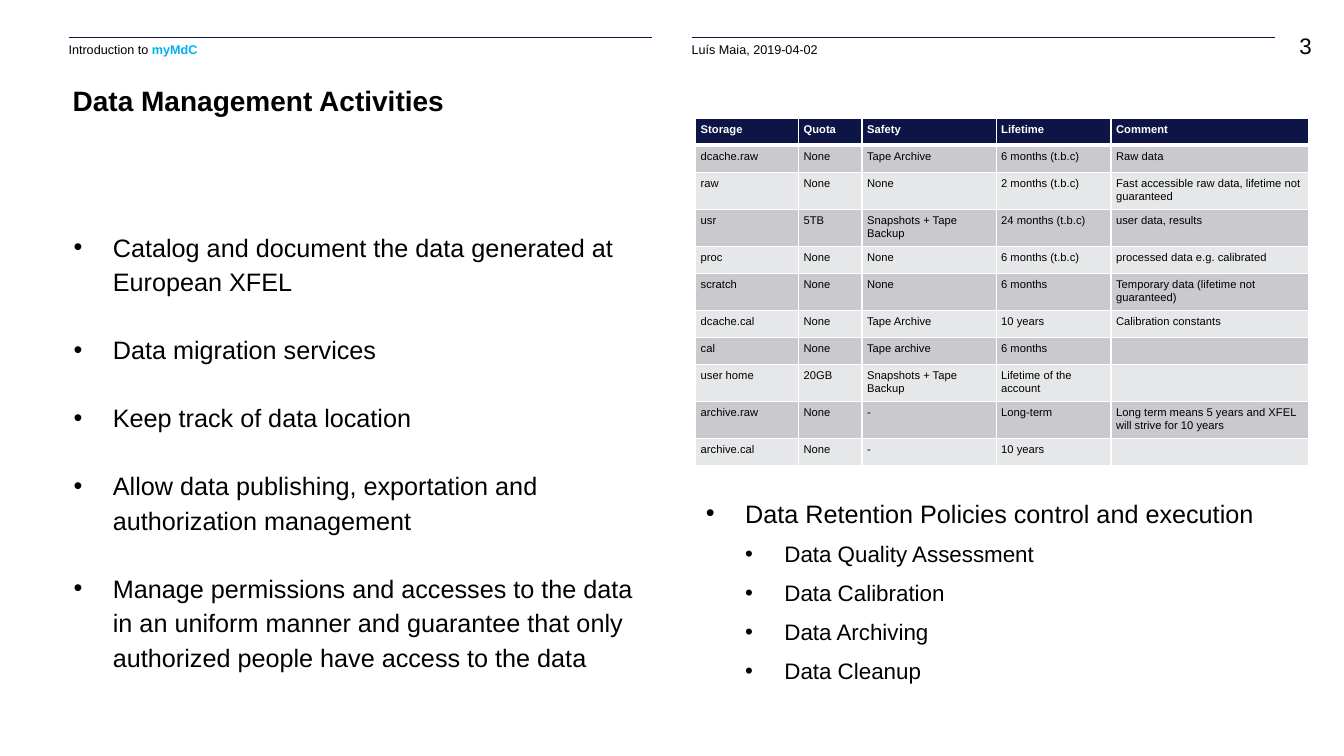
import dataclasses
import typing

import lxml.etree
import pptx
import pptx.dml.color
import pptx.enum.shapes
import pptx.enum.text
import pptx.oxml.ns
import pptx.util

Inches = pptx.util.Inches
Pt = pptx.util.Pt
qn = pptx.oxml.ns.qn


@dataclasses.dataclass(frozen=True)
class Theme:
    font: str = "Arial"
    text: str = "000000"
    accent: str = "00B0F0"
    navy: str = "0D1546"
    white: str = "FFFFFF"
    bands: tuple[str, str] = ("CACACE", "E6E7E8")
    table_size: float = 8
    header_size: float = 9
    sub_bullet_size: float = 16
    number_size: float = 16
    bullet_size: float = 18
    title_size: float = 20


THEME = Theme()


class Box(typing.NamedTuple):
    left: float
    top: float
    width: float
    height: float


class Run(typing.NamedTuple):
    text: str
    size: float
    color: str = THEME.text
    bold: bool = False


class Bullet(typing.NamedTuple):
    text: str
    level: int = 0


@dataclasses.dataclass(frozen=True)
class Label:
    box: Box
    runs: tuple[Run, ...]
    inset: float = 0
    wrap: bool = True
    alignment: pptx.enum.text.PP_ALIGN = pptx.enum.text.PP_ALIGN.LEFT


@dataclasses.dataclass(frozen=True)
class BulletList:
    box: Box
    bullets: tuple[Bullet, ...]


INSET = 0.05
HANGING_INDENT = 0.39
HEADER_WIDTH = 5.79
HEADER_LEFTS = (0.68, 6.86)
RULE_TOP = 0.37

HEADERS = (
    (Run("Introduction to ", THEME.header_size),
     Run("myMdC", THEME.header_size, THEME.accent, True)),
    (Run("Luís Maia, 2019-04-02", THEME.header_size),),
)
LABELS = [Label(Box(left, 0.42, HEADER_WIDTH, 0.14), runs)
          for left, runs in zip(HEADER_LEFTS, HEADERS)] + [
    Label(Box(12.87, 0.32, 0.14, 0.24), (Run("3", THEME.number_size),),
          wrap=False, alignment=pptx.enum.text.PP_ALIGN.RIGHT),
    Label(Box(0.67, 0.78, 11.98, 0.41),
          (Run("Data Management Activities", THEME.title_size, bold=True),), INSET),
]

BULLET_LISTS = (
    BulletList(Box(0.68, 2.21, 5.83, 4.37), (
        Bullet("Catalog and document the data generated at European XFEL"),
        Bullet("Data migration services"),
        Bullet("Keep track of data location"),
        Bullet("Allow data publishing, exportation and authorization management"),
        Bullet("Manage permissions and accesses to the data in an uniform manner "
               "and guarantee that only authorized people have access to the data"),
    )),
    BulletList(Box(6.95, 4.85, 6.02, 1.86), (
        Bullet("Data Retention Policies control and execution"),
        Bullet("Data Quality Assessment", 1),
        Bullet("Data Calibration", 1),
        Bullet("Data Archiving", 1),
        Bullet("Data Cleanup", 1),
    )),
)

STORAGE_BOX = Box(6.9, 1.17, 6.07, 3.2)
COLUMN_WIDTHS = (1.02, 0.63, 1.33, 1.14, 1.96)
ROW_HEIGHT = 0.27
TALL_ROW_HEIGHT = 0.36
TALL_ROWS = ("raw", "user home")
STORAGE_ROWS = (
    ("Storage", "Quota", "Safety", "Lifetime", "Comment"),
    ("dcache.raw", "None", "Tape Archive", "6 months (t.b.c)", "Raw data"),
    ("raw", "None", "None", "2 months (t.b.c)",
     "Fast accessible raw data, lifetime not guaranteed"),
    ("usr", "5TB", "Snapshots + Tape Backup", "24 months (t.b.c)", "user data, results"),
    ("proc", "None", "None", "6 months (t.b.c)", "processed data e.g. calibrated"),
    ("scratch", "None", "None", "6 months", "Temporary data (lifetime not guaranteed)"),
    ("dcache.cal", "None", "Tape Archive", "10 years", "Calibration constants"),
    ("cal", "None", "Tape archive", "6 months", ""),
    ("user home", "20GB", "Snapshots + Tape Backup", "Lifetime of the account", ""),
    ("archive.raw", "None", "-", "Long-term",
     "Long term means 5 years and XFEL will strive for 10 years"),
    ("archive.cal", "None", "-", "10 years", ""),
)


def rgb(color: str) -> pptx.dml.color.RGBColor:
    return pptx.dml.color.RGBColor.from_string(color)


def add_run(paragraph, run: Run) -> None:
    text_run = paragraph.add_run()
    text_run.text = run.text
    font = text_run.font
    font.name, font.size, font.bold = THEME.font, Pt(run.size), run.bold
    font.color.rgb = rgb(run.color)


def set_margins(target, inset: float) -> None:
    for side in ("left", "top", "right", "bottom"):
        setattr(target, f"margin_{side}", Inches(inset))


def add_text_frame(slide, box: Box, inset: float, wrap: bool = True):
    frame = slide.shapes.add_textbox(*map(Inches, box)).text_frame
    frame.word_wrap = wrap
    frame.auto_size = pptx.enum.text.MSO_AUTO_SIZE.SHAPE_TO_FIT_TEXT
    set_margins(frame, inset)
    return frame


def add_label(slide, label: Label) -> None:
    paragraph = add_text_frame(slide, label.box, label.inset, label.wrap).paragraphs[0]
    paragraph.alignment = label.alignment
    for run in label.runs:
        add_run(paragraph, run)


def add_bullet_list(slide, bullet_list: BulletList) -> None:
    frame = add_text_frame(slide, bullet_list.box, INSET)
    for index, bullet in enumerate(bullet_list.bullets):
        paragraph = frame.add_paragraph() if index else frame.paragraphs[0]
        paragraph.level = bullet.level
        paragraph.line_spacing = 1.14
        if index:
            paragraph.space_before = Pt(6 if bullet.level else 24)
        properties = paragraph._p.get_or_add_pPr()
        properties.set("marL", str(Inches(HANGING_INDENT * (bullet.level + 1))))
        properties.set("indent", str(-Inches(HANGING_INDENT)))
        lxml.etree.SubElement(properties, qn("a:buFont"), typeface=THEME.font)
        lxml.etree.SubElement(properties, qn("a:buChar"), char="•")
        size = THEME.sub_bullet_size if bullet.level else THEME.bullet_size
        add_run(paragraph, Run(bullet.text, size))


def add_header_rule(slide, left: float) -> None:
    rule = slide.shapes.add_connector(
        pptx.enum.shapes.MSO_CONNECTOR.STRAIGHT, Inches(left), Inches(RULE_TOP),
        Inches(left + HEADER_WIDTH), Inches(RULE_TOP))
    rule.line.color.rgb = rgb(THEME.navy)
    rule.line.width = Pt(0.5)
    lxml.etree.SubElement(rule._element.spPr, qn("a:effectLst"))


def fill_cell(cell, run: Run, fill: str, bottom_border: float) -> None:
    set_margins(cell, INSET)
    properties = cell._tc.get_or_add_tcPr()
    for side, width in (("L", 1), ("R", 1), ("T", 1), ("B", bottom_border)):
        border = lxml.etree.SubElement(properties, qn(f"a:ln{side}"), w=str(Pt(width)))
        solid = lxml.etree.SubElement(border, qn("a:solidFill"))
        lxml.etree.SubElement(solid, qn("a:srgbClr"), val=THEME.white)
    cell.fill.solid()
    cell.fill.fore_color.rgb = rgb(fill)
    paragraph = cell.text_frame.paragraphs[0]
    if run.text:
        add_run(paragraph, run)
    else:
        lxml.etree.SubElement(paragraph._p, qn("a:endParaRPr"), sz=str(int(run.size * 100)))


def add_storage_table(slide) -> None:
    table = slide.shapes.add_table(
        len(STORAGE_ROWS), len(COLUMN_WIDTHS), *map(Inches, STORAGE_BOX)).table
    table.horz_banding = False
    for column, width in zip(table.columns, COLUMN_WIDTHS):
        column.width = Inches(width)
    for index, values in enumerate(STORAGE_ROWS):
        tall = values[0] in TALL_ROWS
        table.rows[index].height = Inches(TALL_ROW_HEIGHT if tall else ROW_HEIGHT)
        heading = index == 0
        fill = THEME.navy if heading else THEME.bands[(index - 1) % 2]
        color = THEME.white if heading else THEME.text
        for cell, text in zip(table.rows[index].cells, values):
            run = Run(text, THEME.table_size, color, heading)
            fill_cell(cell, run, fill, 3 if heading else 1)


def main() -> None:
    presentation = pptx.Presentation()
    presentation.slide_width, presentation.slide_height = Inches(13.33), Inches(7.5)
    slide = presentation.slides.add_slide(presentation.slide_layouts[6])
    for left in HEADER_LEFTS:
        add_header_rule(slide, left)
    for label in LABELS:
        add_label(slide, label)
    for bullet_list in BULLET_LISTS:
        add_bullet_list(slide, bullet_list)
    add_storage_table(slide)
    presentation.save("out.pptx")


if __name__ == "__main__":
    main()
